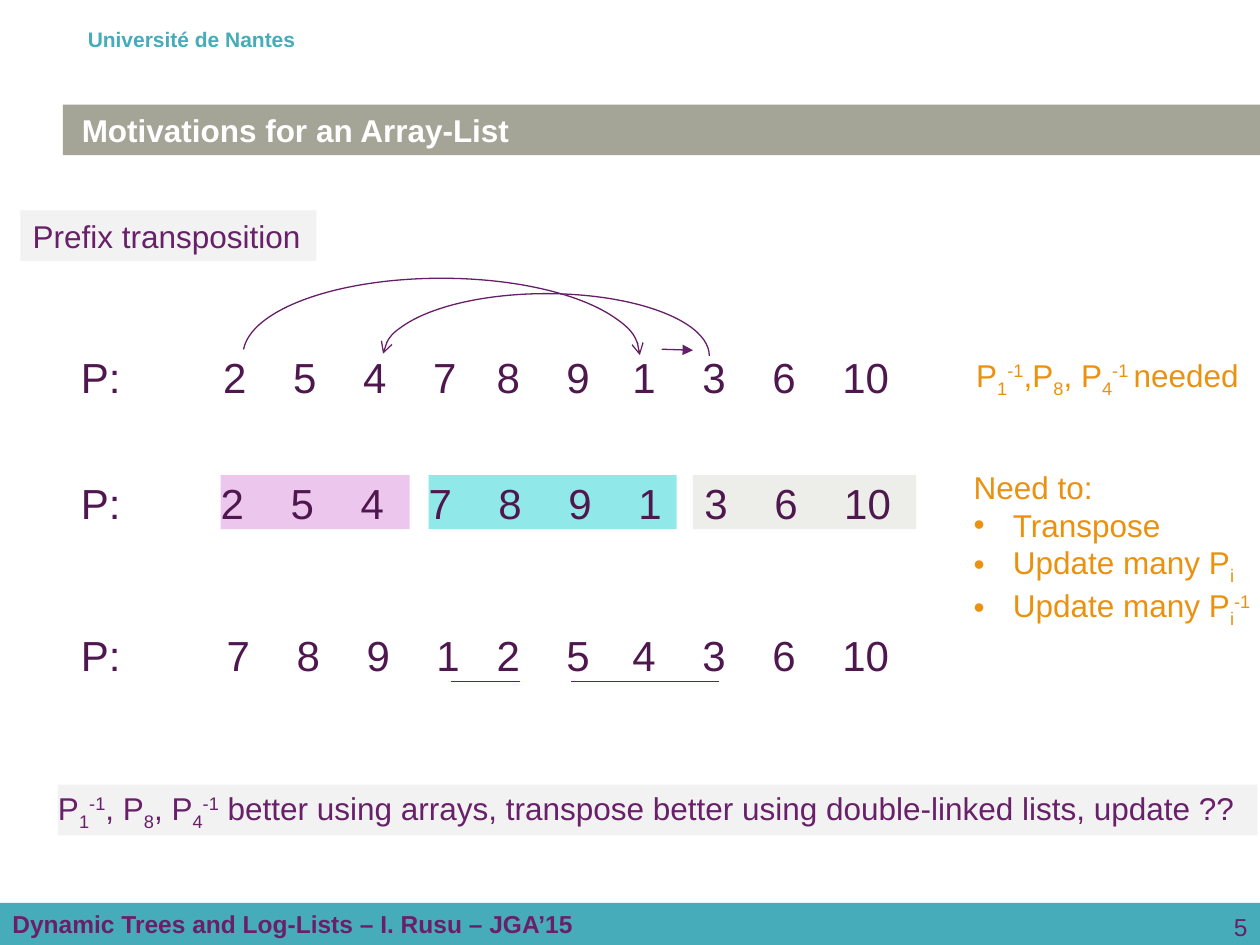
"""Build the slide on prefix transpositions that motivates an array-list."""
from lxml import etree
from pptx import Presentation
from pptx.dml.color import RGBColor
from pptx.enum.shapes import MSO_CONNECTOR, MSO_SHAPE
from pptx.enum.text import MSO_ANCHOR, PP_ALIGN
from pptx.oxml.ns import qn
from pptx.util import Cm, Pt

RECTANGLE, ARC = MSO_SHAPE.RECTANGLE, MSO_SHAPE.ARC
STRAIGHT = MSO_CONNECTOR.STRAIGHT
TOP, MIDDLE = MSO_ANCHOR.TOP, MSO_ANCHOR.MIDDLE
LEFT, RIGHT = PP_ALIGN.LEFT, PP_ALIGN.RIGHT

TEAL = RGBColor(0x46, 0xAC, 0xBA)
PURPLE = RGBColor(0x68, 0x20, 0x69)
DARK_PURPLE = RGBColor(0x4E, 0x18, 0x4F)
LINE_PURPLE = RGBColor(0x67, 0x1E, 0x68)
ORANGE = RGBColor(0xEA, 0x92, 0x10)
TITLE_GREY = RGBColor(0xA4, 0xA5, 0x97)
PALE_GREY = RGBColor(0xF2, 0xF2, 0xF2)
WHITE = RGBColor(0xFF, 0xFF, 0xFF)
PINK = RGBColor(0xED, 0xC6, 0xEE)
AQUA = RGBColor(0x90, 0xE8, 0xE8)
STONE = RGBColor(0xED, 0xED, 0xEA)

SUB, SUP = -25000, 30000
NO_INSETS = (0, 0, 0, 0)
DEFAULT_INSETS = (0.25, 0.13, 0.25, 0.13)
ROW_HEIGHT = 1.09
NUMBER_STEP = Cm(1.41)
BULLET_INDENT = Cm(0.79)

ROWS = [
    (7.04, [(4.5, 5.21, WHITE, 0, "2 5 4 7"),
            (10.01, 2.26, WHITE, 0, "8 9"),
            (12.75, 5.72, WHITE, 0, "1 3 6 10")]),
    (9.58, [(4.45, 3.81, PINK, 0, "2 5 4"),
            (8.64, 5, AQUA, 0, "7 8 9 1"),
            (13.97, 4.5, STONE, 0.23, "3 6 10")]),
    (12.65, [(4.57, 5.21, WHITE, 0, "7 8 9 1"),
             (10.01, 2.26, WHITE, 0, "2 5"),
             (12.75, 5.72, WHITE, 0, "4 3 6 10")]),
]


def apply_format(target, values):
    """Set each named attribute of the target."""
    for name, value in values.items():
        setattr(target, name, value)


def add_tabs(paragraph, count):
    """Give the paragraph evenly spaced tab stops."""
    stops = etree.SubElement(paragraph._p.get_or_add_pPr(), qn("a:tabLst"))
    for index in range(1, count + 1):
        etree.SubElement(stops, qn("a:tab"), pos=str(NUMBER_STEP * index), algn="l")


def add_bullet(paragraph):
    """Give the paragraph a round bullet with a hanging indent."""
    properties = paragraph._p.get_or_add_pPr()
    properties.set("marL", str(BULLET_INDENT))
    properties.set("indent", str(-BULLET_INDENT))
    etree.SubElement(properties, qn("a:buFont"), typeface="Arial")
    etree.SubElement(properties, qn("a:buChar"), char="•")


def write_runs(paragraph, pieces, size, color, bold=False):
    """Write (text, baseline) pieces into the paragraph."""
    for text, baseline in pieces:
        run = paragraph.add_run()
        run.text = text
        apply_format(run.font, {"name": "Arial", "size": Pt(size), "bold": bold})
        run.font.color.rgb = color
        if baseline:
            run._r.get_or_add_rPr().set("baseline", str(baseline))


def add_panel(slide, box, fill=None, insets=DEFAULT_INSETS, anchor=TOP):
    """Add a text box, or a filled rectangle, and return its text frame."""
    bounds = [Cm(length) for length in box]
    if fill is None:
        panel = slide.shapes.add_textbox(*bounds)
    else:
        panel = slide.shapes.add_shape(RECTANGLE, *bounds)
        panel.shadow.inherit = False
        panel.fill.solid()
        panel.fill.fore_color.rgb = fill
        panel.line.fill.background()
    left, top, right, bottom = (Cm(inset) for inset in insets)
    apply_format(panel.text_frame, {
        "word_wrap": True, "vertical_anchor": anchor,
        "margin_left": left, "margin_top": top,
        "margin_right": right, "margin_bottom": bottom})
    return panel.text_frame


def add_label(slide, box, pieces, size, color, bold=False, align=LEFT, **panel):
    """Add a one-paragraph label."""
    paragraph = add_panel(slide, box, **panel).paragraphs[0]
    paragraph.alignment = align
    write_runs(paragraph, pieces, size, color, bold)


def add_numbers(slide, box, fill, inset, numbers):
    """Add a block of evenly spaced permutation elements."""
    frame = add_panel(slide, box, fill, (inset, 0, 0, 0), MIDDLE)
    paragraph = frame.paragraphs[0]
    paragraph.alignment = LEFT
    values = numbers.split()
    add_tabs(paragraph, len(values) - 1)
    write_runs(paragraph, [("\t".join(values), 0)], 24, DARK_PURPLE)


def style_line(shape, end=None, head="arrow"):
    """Draw a thin purple line, with an arrowhead at the named end."""
    shape.line.color.rgb = LINE_PURPLE
    shape.line.width = Pt(0.75)
    if end:
        etree.SubElement(shape.line._get_or_add_ln(), qn(f"a:{end}"), type=head)


def add_move(slide, box, start, end):
    """Add an arched arrow that moves an element."""
    arch = slide.shapes.add_shape(ARC, *[Cm(length) for length in box])
    arch.shadow.inherit = False
    arch.fill.background()
    arch.adjustments[0] = start
    arch.adjustments[1] = 0
    style_line(arch, end)


def add_segment(slide, points, end=None):
    """Add a straight line, optionally ending in a triangle."""
    segment = slide.shapes.add_connector(STRAIGHT, *[Cm(point) for point in points])
    style_line(segment, end, "triangle")
    etree.SubElement(segment._element.spPr, qn("a:effectLst"))


def inverse_terms(first_separator):
    """Return the pieces for the terms that the transposition looks up."""
    return [("P", 0), ("1", SUB), ("-1", SUP), (first_separator + "P", 0),
            ("8", SUB), (", P", 0), ("4", SUB)]


def add_needs(slide):
    """Add the list of operations that are needed."""
    frame = add_panel(slide, (19.38, 9.3, 6.38, 3.33))
    write_runs(frame.paragraphs[0], [("Need to:", 0)], 18, ORANGE)
    update = [("Update many P", 0), ("i", SUB)]
    for pieces in ([("Transpose", 0)], update, update + [("-1", SUP)]):
        paragraph = frame.add_paragraph()
        add_bullet(paragraph)
        write_runs(paragraph, pieces, 18, ORANGE)


def main():
    """Build and save the slide."""
    deck = Presentation()
    apply_format(deck, {"slide_width": Cm(25.4), "slide_height": Cm(19.05)})
    slide = deck.slides.add_slide(deck.slide_layouts[6])

    add_label(slide, (0, 0.41, 25.4, 0.77), [("Université de Nantes", 0)], 12, TEAL,
              bold=True, insets=(1.77, 0.13, 0.25, 0.13))
    add_label(slide, (0, 18.2, 25.4, 0.85),
              [("Dynamic Trees and Log-Lists – I. Rusu – JGA’15", 0)], 14, PURPLE,
              bold=True, fill=TEAL, anchor=MIDDLE)
    add_label(slide, (19.48, 18.26, 5.92, 0.79), [("5", 0)], 14, PURPLE, align=RIGHT)
    add_label(slide, (1.27, 2.11, 24.13, 1.02), [("Motivations for an Array-List", 0)],
              18, WHITE, bold=True, fill=TITLE_GREY, anchor=MIDDLE,
              insets=(0.38, 0.13, 0.38, 0.13))

    for top, blocks in ROWS:
        add_label(slide, (1.63, top, 5.03, ROW_HEIGHT), [("P:", 0)], 24, DARK_PURPLE,
                  insets=NO_INSETS, anchor=MIDDLE)
        for left, width, fill, inset, numbers in blocks:
            add_numbers(slide, (left, top, width, ROW_HEIGHT), fill, inset, numbers)

    add_label(slide, (19.43, 7.04, 6.17, 1.02),
              inverse_terms(",") + [("-1 ", SUP), ("needed", 0)], 18, ORANGE)
    add_label(slide, (0.41, 4.24, 5.97, 1.02), [("Prefix transposition", 0)], 18, PURPLE,
              fill=PALE_GREY, insets=(0.25, 0.13, 0, 0.13))
    add_move(slide, (4.9, 5.61, 8, 3.1), 108.98, "tailEnd")
    add_move(slide, (7.72, 5.92, 6.58, 2.51), 108.46, "headEnd")
    add_segment(slide, (13.34, 7.04, 13.97, 7.06), "tailEnd")
    add_needs(slide)
    add_label(slide, (1.17, 15.82, 24.18, 1.02),
              inverse_terms(", ") + [("-1", SUP), (
                  " better using arrays, transpose better using double-linked lists,"
                  " update ??", 0)],
              18, PURPLE, fill=PALE_GREY, insets=(0, 0.08, 0, 0))
    for start, stop in ((9.09, 10.49), (11.51, 14.5)):
        add_segment(slide, (start, 13.74, stop, 13.74))

    deck.save("out.pptx")


if __name__ == "__main__":
    main()
